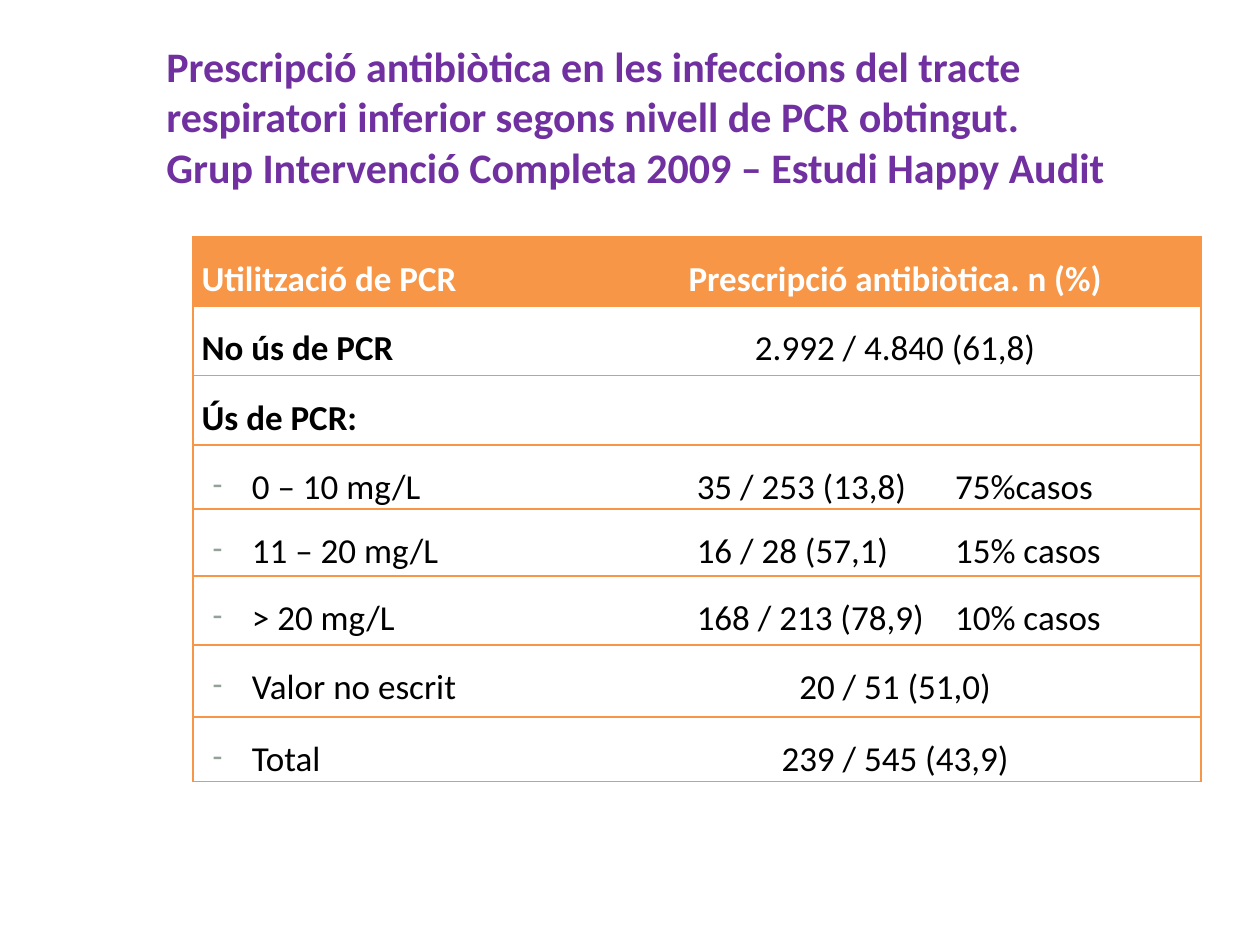
from lxml.etree import SubElement
from pptx import Presentation
from pptx.dml.color import RGBColor
from pptx.enum.text import MSO_ANCHOR, MSO_AUTO_SIZE, PP_ALIGN
from pptx.oxml.ns import qn
from pptx.util import Inches, Pt

ORANGE = RGBColor(0xF7, 0x96, 0x46)
PURPLE = RGBColor(0x70, 0x30, 0xA0)
WHITE = RGBColor(0xFF, 0xFF, 0xFF)
BLACK = RGBColor(0x00, 0x00, 0x00)
BULLET_GREY = RGBColor(0x93, 0xA2, 0x99)
FONT = "Calibri"

TITLE = [
    "Prescripció antibiòtica en les infeccions del tracte "
    "respiratori inferior segons nivell de PCR obtingut.",
    "Grup Intervenció Completa 2009 – Estudi Happy Audit",
]
HEADER = ("Utilització de PCR", "Prescripció antibiòtica. n (%)")
GROUPS = [("No ús de PCR", "2.992 / 4.840 (61,8)"), ("Ús de PCR:", "")]
# A tab separates the prescription figures from the share of cases.
LEVELS = [
    ("0 – 10 mg/L", "35 / 253 (13,8)\t75%casos"),
    ("11 – 20 mg/L", "16 / 28 (57,1)\t15% casos"),
    ("> 20 mg/L", "168 / 213 (78,9)\t10% casos"),
    ("Valor no escrit", "20 / 51 (51,0)"),
    ("Total", "239 / 545 (43,9)"),
]
ROWS = [HEADER, *GROUPS, *LEVELS]
FIRST_LEVEL = 1 + len(GROUPS)
COLUMN_WIDTHS = [3.15, 4.85]
ROW_HEIGHTS = [0.55, 0.55, 0.55, 0.51, 0.53, 0.55, 0.57, 0.51]
CASES_INDENT, CASES_TAB = 0.85, 2.05


def set_borders(cell, visible_sides):
    tc_pr = cell._tc.get_or_add_tcPr()
    for side in "LRTB":
        line = SubElement(tc_pr, qn(f"a:ln{side}"), w=str(Pt(1)))
        if side in visible_sides:
            fill = SubElement(line, qn("a:solidFill"))
            SubElement(fill, qn("a:srgbClr"), val=str(ORANGE))
        else:
            SubElement(line, qn("a:noFill"))


def add_dash_bullet(paragraph):
    p_pr = paragraph._p.get_or_add_pPr()
    p_pr.set("marL", str(Inches(0.4)))
    p_pr.set("indent", str(Inches(-0.31)))
    color = SubElement(p_pr, qn("a:buClr"))
    SubElement(color, qn("a:srgbClr"), val=str(BULLET_GREY))
    SubElement(p_pr, qn("a:buSzPct"), val="80000")
    SubElement(p_pr, qn("a:buChar"), char="-")


def add_tab_stop(paragraph, position):
    tabs = SubElement(paragraph._p.get_or_add_pPr(), qn("a:tabLst"))
    SubElement(tabs, qn("a:tab"), pos=str(Inches(position)), algn="l")


def style_font(paragraph, size, color, bold):
    font = paragraph.font
    font.name, font.size, font.bold = FONT, Pt(size), bold
    font.color.rgb = color


def fill_title(title):
    title.left, title.top = Inches(1.22), Inches(0.27)
    title.width, title.height = Inches(8.43), Inches(0.75)
    frame = title.text_frame
    frame.text = "\n".join(TITLE)
    frame.word_wrap = True
    frame.auto_size = MSO_AUTO_SIZE.NONE
    frame.vertical_anchor = MSO_ANCHOR.TOP
    for paragraph in frame.paragraphs:
        paragraph.alignment = PP_ALIGN.LEFT
        style_font(paragraph, 24, PURPLE, True)


def fill_cell(cell, text, row, column):
    is_header, is_label = row == 0, column == 0
    cell.text = text
    cell.vertical_anchor = MSO_ANCHOR.TOP
    cell.margin_left = cell.margin_right = Inches(0.07)
    cell.margin_top = cell.margin_bottom = 0
    set_borders(cell, "LTB" if is_label else "RTB")
    if is_header:
        cell.fill.solid()
        cell.fill.fore_color.rgb = ORANGE
    else:
        cell.fill.background()

    paragraph = cell.text_frame.paragraphs[0]
    paragraph.alignment = PP_ALIGN.JUSTIFY if is_label else PP_ALIGN.CENTER
    paragraph.line_spacing = 1.5
    if is_label and row >= FIRST_LEVEL:
        add_dash_bullet(paragraph)
    if "\t" in text:
        paragraph.alignment = PP_ALIGN.LEFT
        cell.margin_left = Inches(CASES_INDENT)
        add_tab_stop(paragraph, CASES_TAB)
    bold = is_header or (is_label and row < FIRST_LEVEL)
    style_font(paragraph, 20, WHITE if is_header else BLACK, bold)


def add_prescription_table(slide):
    table = slide.shapes.add_table(
        len(ROWS), len(COLUMN_WIDTHS), Inches(1.53), Inches(1.88),
        Inches(sum(COLUMN_WIDTHS)), Inches(sum(ROW_HEIGHTS))).table
    table.horz_banding = False
    table.first_row = False
    for column, width in zip(table.columns, COLUMN_WIDTHS):
        column.width = Inches(width)
    for table_row, height in zip(table.rows, ROW_HEIGHTS):
        table_row.height = Inches(height)
    for row, texts in enumerate(ROWS):
        for column, text in enumerate(texts):
            fill_cell(table.cell(row, column), text, row, column)


def main():
    prs = Presentation()
    prs.slide_width, prs.slide_height = Inches(10), Inches(7.5)
    slide = prs.slides.add_slide(prs.slide_layouts[5])
    add_prescription_table(slide)
    fill_title(slide.shapes.title)
    prs.save("out.pptx")


if __name__ == "__main__":
    main()
